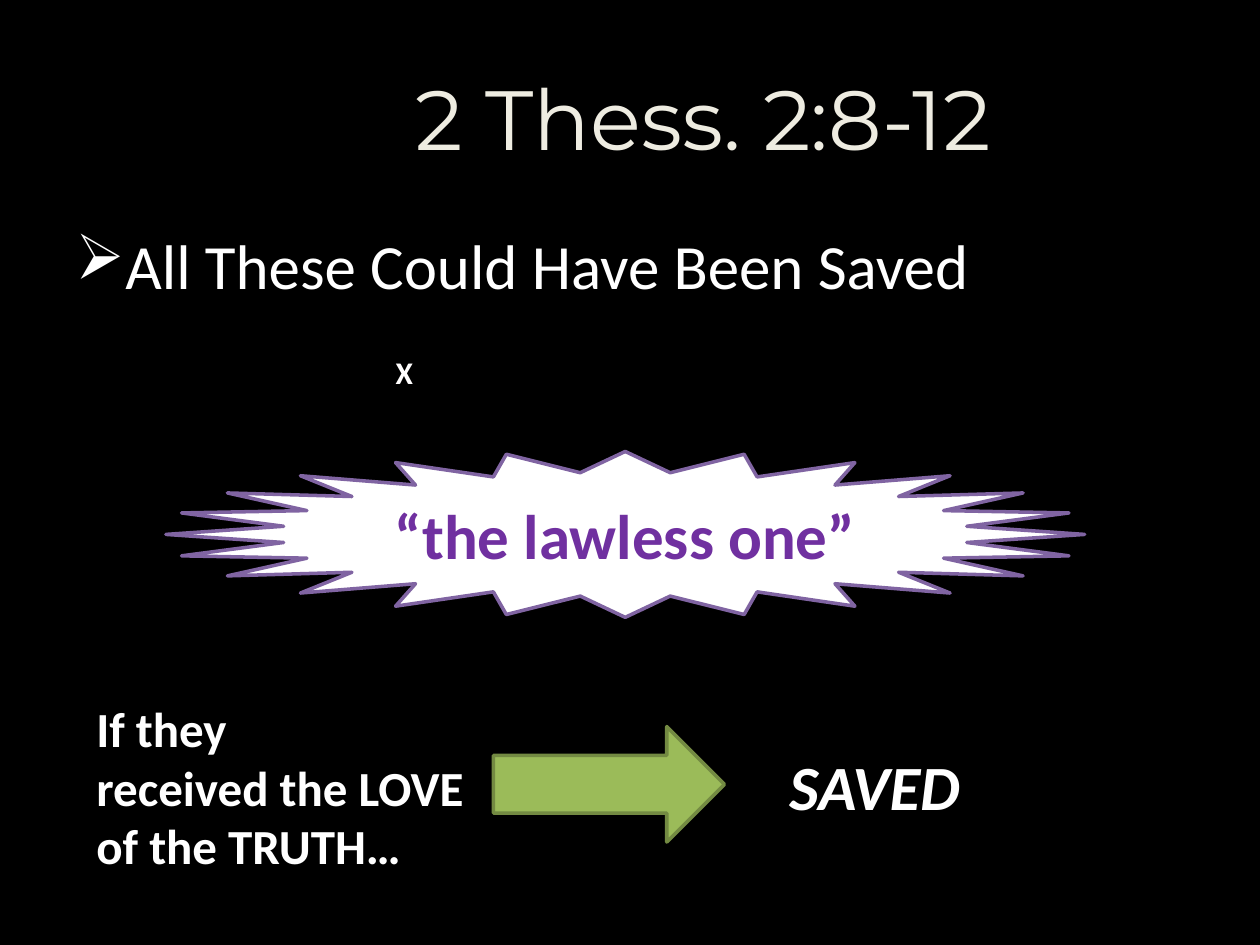
from dataclasses import dataclass

from lxml.etree import SubElement
from pptx import Presentation
from pptx.dml.color import RGBColor as RGB
from pptx.enum.shapes import MSO_SHAPE as SHAPE
from pptx.enum.text import MSO_ANCHOR as ANCHOR, PP_ALIGN as ALIGN
from pptx.oxml.ns import qn
from pptx.util import Inches, Pt


@dataclass(frozen=True)
class Theme:
    black: str = "000000"
    white: str = "FFFFFF"
    cream: str = "EEECE1"
    purple: str = "7030A0"
    purple_line: str = "8064A2"
    green: str = "9BBB59"
    green_line: str = "738A42"
    orange: str = "E78738"
    soft_white: str = "FFFEFE"
    body_font: str = "Calibri"
    title_font: str = "Montserrat"
    title: int = 48
    large: int = 36
    medium: int = 28
    small: int = 18


def rgb(code):
    return RGB.from_string(code)


def add_outline(r, color, width):
    rPr = r._r.get_or_add_rPr()
    ln = SubElement(rPr, qn("a:ln"), w=str(Pt(width)))
    fill = SubElement(ln, qn("a:solidFill"))
    SubElement(fill, qn("a:srgbClr"), val=color)
    rPr.insert(0, ln)


def add_bullet(p, char, indent):
    pPr = p._p.get_or_add_pPr()
    pPr.set("marL", str(Inches(indent)))
    pPr.set("indent", str(-Inches(indent)))
    SubElement(pPr, qn("a:buChar"), char=char)


def write(tf, text, *, size, color, font=Theme.body_font, bold=False, italic=False,
          align=ALIGN.LEFT, anchor=ANCHOR.TOP, wrap=True, bullet=None,
          outline=None, spacing=None):
    """Fill a text frame, one paragraph for each line of the text."""
    tf.word_wrap = wrap
    tf.vertical_anchor = anchor
    for i, line in enumerate(text.split("\n")):
        p = tf.add_paragraph() if i else tf.paragraphs[0]
        p.alignment = align
        if bullet:
            add_bullet(p, bullet, 0.38)
        r = p.add_run()
        r.text = line
        r.font.name, r.font.size = font, Pt(size)
        r.font.bold, r.font.italic = bold, italic
        r.font.color.rgb = rgb(color)
        if outline:
            add_outline(r, *outline)
        if spacing:
            r._r.get_or_add_rPr().set("spc", str(int(spacing * 100)))


class Deck:
    """Places elements on a grid of 120 columns and 90 rows."""
    COLS, ROWS = 120, 90

    def __init__(self, theme):
        self.theme = theme
        self.prs = Presentation()
        self.prs.slide_width, self.prs.slide_height = Inches(10), Inches(7.5)

    def box(self, col, row, cols, rows):
        dx = self.prs.slide_width / self.COLS
        dy = self.prs.slide_height / self.ROWS
        return [round(v) for v in (col * dx, row * dy, cols * dx, rows * dy)]

    def slide(self, background):
        self.s = self.prs.slides.add_slide(self.prs.slide_layouts[5])
        fill = self.s.background.fill
        fill.solid()
        fill.fore_color.rgb = rgb(background)

    def title(self, text, *cell, **style):
        sp = self.s.shapes.title
        sp.left, sp.top, sp.width, sp.height = self.box(*cell)
        write(sp.text_frame, text, align=ALIGN.CENTER, anchor=ANCHOR.MIDDLE, **style)

    def text(self, text, *cell, **style):
        sp = self.s.shapes.add_textbox(*self.box(*cell))
        write(sp.text_frame, text, **style)
        return sp

    def shape(self, kind, *cell, fill, line):
        sp = self.s.shapes.add_shape(kind, *self.box(*cell))
        sp.shadow.inherit = False
        sp.fill.solid()
        sp.fill.fore_color.rgb = rgb(fill)
        sp.line.color.rgb = rgb(line)
        sp.line.width = Pt(2)
        return sp

    def group(self, *shapes):
        return self.s.shapes.add_group_shape(shapes)


def main():
    t = Theme()
    deck = Deck(t)
    deck.slide(t.black)

    # Heading and main point
    deck.title("2 Thess. 2:8-12", 20, 3.6, 94, 15, size=t.title, color=t.cream,
               font=t.title_font, outline=(t.black, 0.75))
    deck.text("All These Could Have Been Saved", 6, 21, 108, 11,
              size=t.large, color=t.white, bullet="➢")

    # Starburst
    star = deck.shape(SHAPE.STAR_24_POINT, 15.8, 43, 87.5, 15.8,
                      fill=t.white, line=t.purple_line)
    write(star.text_frame, "“the lawless one”", size=t.large, color=t.purple,
          bold=True, align=ALIGN.CENTER, anchor=ANCHOR.MIDDLE, wrap=False)

    # Condition, arrow and outcome
    condition = deck.text("If they\nreceived the LOVE of the TRUTH…", 8, 65.9, 39, 18.1,
                          size=t.medium, color=t.white, bold=True)
    arrow = deck.shape(SHAPE.RIGHT_ARROW, 47, 69.2, 22, 11,
                       fill=t.green, line=t.green_line)
    outcome = deck.text("SAVED", 73.9, 70.6, 18.8, 8.5, size=t.large, color=t.white,
                        bold=True, italic=True, align=ALIGN.CENTER, wrap=False)
    deck.group(condition, arrow, outcome)

    # Cross mark
    deck.text("X", 36.5, 33, 43, 35.9, size=t.small, color=t.soft_white, bold=True,
              outline=(t.orange, 1), spacing=0.5)

    deck.prs.save("out.pptx")


if __name__ == "__main__":
    main()
